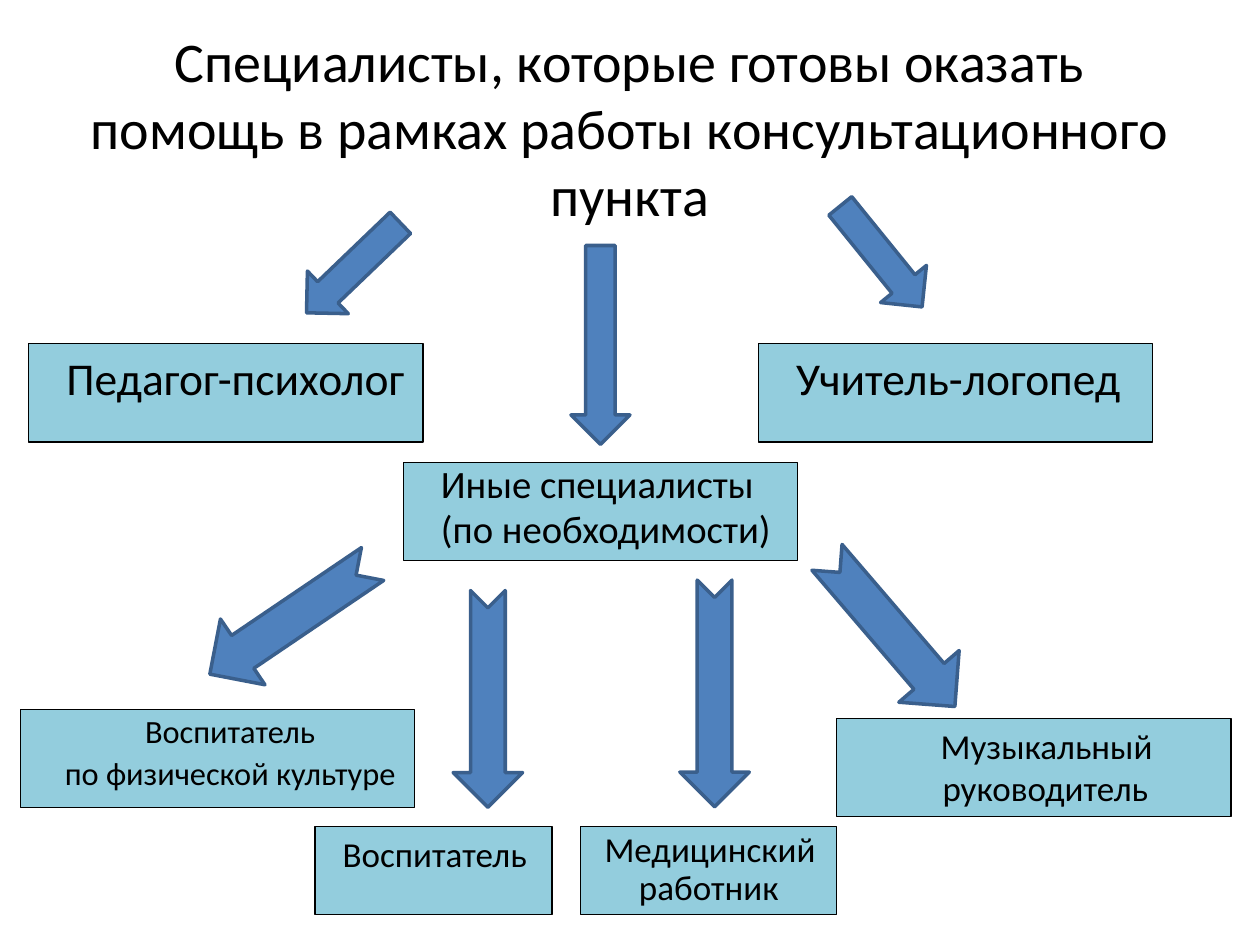
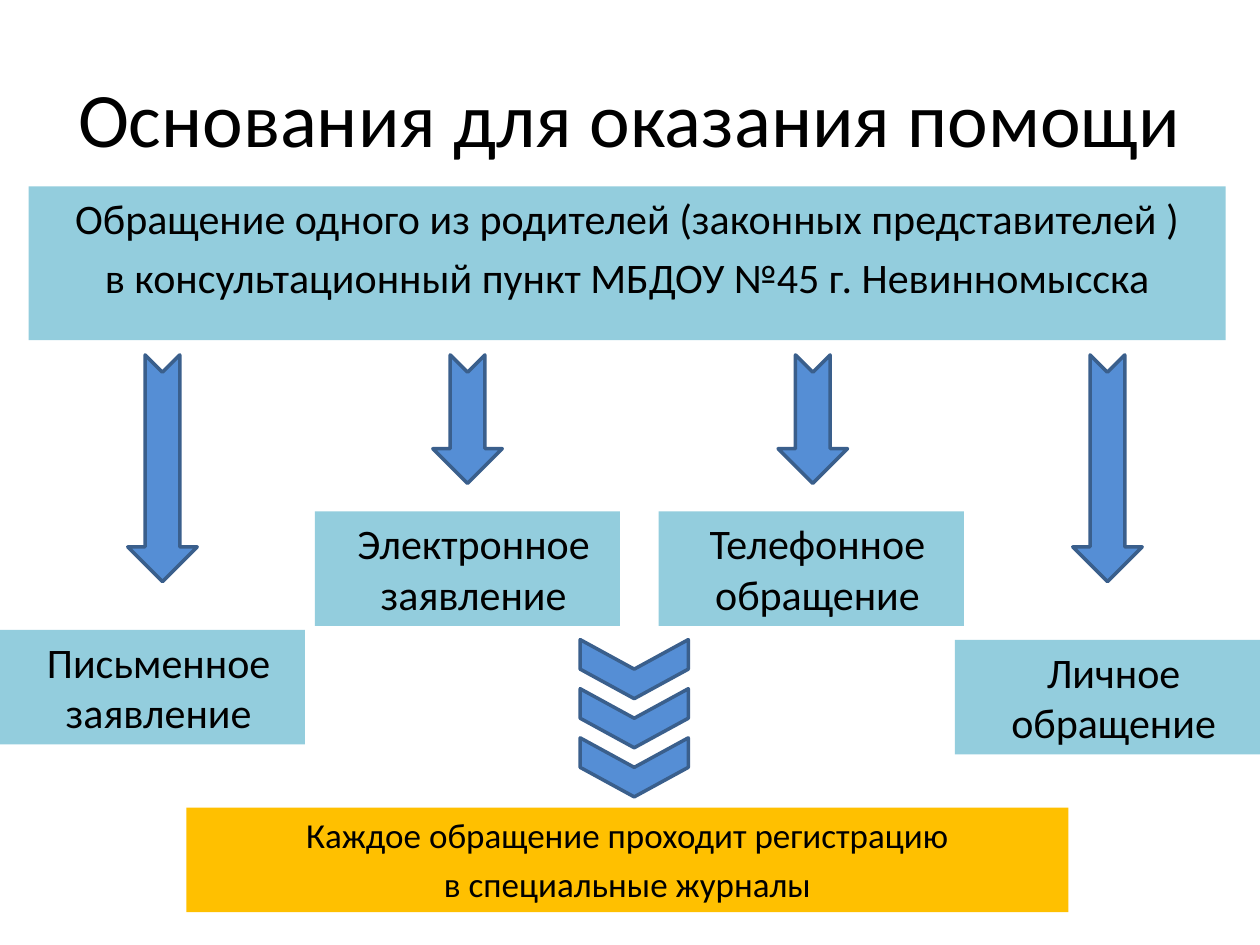
"""Build two slides on the specialists of a consultation point and the grounds for help."""
import pptx
import pptx.util
import pptx.dml.color
import pptx.enum.shapes
import pptx.enum.text

Cm, Pt = pptx.util.Cm, pptx.util.Pt
RGB = pptx.dml.color.RGBColor
MSO = pptx.enum.shapes.MSO_SHAPE
ALIGN = pptx.enum.text.PP_ALIGN
ANCHOR = pptx.enum.text.MSO_ANCHOR

FONT = "Calibri"
BLACK = RGB(0x00, 0x00, 0x00)
AQUA = RGB(0x93, 0xCD, 0xDD)
AMBER = RGB(0xFF, 0xC0, 0x00)
BLUE = RGB(0x4F, 0x81, 0xBD)
LIGHT_BLUE = RGB(0x55, 0x8E, 0xD5)
NAVY = RGB(0x3A, 0x5F, 0x8C)


def add_text(sp, text, size=24, align=ALIGN.CENTER, anchor=ANCHOR.TOP,
             margin=0, indent=0, spacing=None):
    tf = sp.text_frame
    tf.word_wrap = True
    tf.vertical_anchor = anchor
    for i, line in enumerate(text.split("\n")):
        p = tf.add_paragraph() if i else tf.paragraphs[0]
        pPr = p._p.get_or_add_pPr()
        pPr.set("marL", str(Cm(margin)))
        pPr.set("indent", str(Cm(indent)))
        p.alignment = align
        p.space_before = Pt(0.2 * size if i else 0)
        if spacing:
            p.line_spacing = spacing
        r = p.add_run()
        r.text = line
        r.font.size = Pt(size)
        r.font.name = FONT
        r.font.color.rgb = BLACK


def add_shape(s, kind, x, y, w, h, fill, line=None, width=0.75, rotation=0):
    sp = s.shapes.add_shape(kind, Cm(x), Cm(y), Cm(w), Cm(h))
    sp.shadow.inherit = False
    sp.rotation = rotation
    sp.fill.solid()
    sp.fill.fore_color.rgb = fill
    if line is None:
        sp.line.fill.background()
    else:
        sp.line.color.rgb = line
        sp.line.width = Pt(width)
    return sp


prs = pptx.Presentation()
prs.slide_width, prs.slide_height = Cm(25.4), Cm(19.05)

titles = [
    ("Специалисты, которые готовы оказать помощь в рамках работы консультационного пункта", 0.97, 32),
    ("Основания для оказания помощи", 0.76, 44),
]
slides = []
for title, y, size in titles:
    s = prs.slides.add_slide(prs.slide_layouts[6])
    sp = s.shapes.add_textbox(Cm(1.27), Cm(y), Cm(22.86), Cm(3.18))
    add_text(sp, title, size=size, anchor=ANCHOR.MIDDLE)
    slides.append(s)
specialists, grounds = slides

WIDE, TALL = 7.95, 1.98
for text, x, y, w, h, size, align, margin, spacing in [
    ("Педагог-психолог", 0.58, 6.93, WIDE, TALL, 26, ALIGN.JUSTIFY, 0.46, None),
    ("Учитель-логопед", 15.29, 6.93, WIDE, TALL, 26, ALIGN.JUSTIFY, 0.46, None),
    ("Иные специалисты\n(по необходимости)", 8.13, 9.32, WIDE, TALL, 22.1, ALIGN.JUSTIFY, 0.46, 0.8),
    ("Воспитатель\nпо физической культуре", 0.41, 14.3, WIDE, TALL, 18.5, ALIGN.CENTER, 0.46, 0.9),
    ("Музыкальный руководитель", 16.87, 14.48, WIDE, TALL, 20, ALIGN.CENTER, 0.46, None),
    ("Воспитатель", 6.35, 16.66, 4.78, 1.78, 20, ALIGN.CENTER, 0, None),
    ("Медицинский работник", 11.71, 16.66, 5.16, 1.78, 20, ALIGN.CENTER, 0, 0.9),
]:
    sp = add_shape(specialists, MSO.RECTANGLE, x, y, w, h, AQUA, BLACK)
    add_text(sp, text, size=size, align=align, margin=margin, indent=0.05, spacing=spacing)

for kind, x, y, w, h, rotation in [
    (MSO.DOWN_ARROW, 6.53, 4.09, 1.19, 2.62, 46.2),
    (MSO.DOWN_ARROW, 17.17, 3.86, 1.19, 2.62, 321),
    (MSO.DOWN_ARROW, 11.51, 4.95, 1.19, 4.01, 0),
    (MSO.NOTCHED_RIGHT_ARROW, 3.89, 11.68, 3.96, 1.6, 145.9),
    (MSO.NOTCHED_RIGHT_ARROW, 7.65, 13.39, 4.37, 1.4, 90),
    (MSO.NOTCHED_RIGHT_ARROW, 12.12, 13.28, 4.57, 1.4, 90),
    (MSO.NOTCHED_RIGHT_ARROW, 15.98, 11.94, 3.96, 1.6, 49.4),
]:
    add_shape(specialists, kind, x, y, w, h, BLUE, NAVY, 2, rotation)

for text, x, y, w, h, size, fill in [
    ("Обращение одного из родителей (законных представителей )\n"
     "в консультационный пункт МБДОУ №45 г. Невинномысска", 0.58, 3.76, 24.13, 3.1, 24, AQUA),
    ("Каждое обращение проходит регистрацию\nв специальные журналы",
     3.76, 16.28, 17.78, 2.11, 20, AMBER),
]:
    sp = add_shape(grounds, MSO.RECTANGLE, x, y, w, h, fill)
    add_text(sp, text, size=size, margin=1.42, indent=-1.42)

for text, x, y, arrow_x, arrow_y, length in [
    ("Письменное заявление", 0, 12.7, 0.99, 8.74, 4.57),
    ("Электронное заявление", 6.35, 10.31, 8.13, 7.75, 2.59),
    ("Телефонное обращение", 13.28, 10.31, 15.09, 7.75, 2.59),
    ("Личное обращение", 19.25, 12.9, 20.04, 8.74, 4.57),
]:
    add_shape(grounds, MSO.NOTCHED_RIGHT_ARROW, arrow_x, arrow_y, length, 1.4, LIGHT_BLUE, NAVY, 2, 90)
    sp = add_shape(grounds, MSO.RECTANGLE, x, y, 6.15, 2.31, AQUA)
    add_text(sp, text, margin=0.25)

for i in range(3):
    add_shape(grounds, MSO.CHEVRON, 12.19, 12.4 + 0.99 * i, 1.19, 2.18, LIGHT_BLUE, NAVY, 2, 90)

prs.save("out.pptx")
